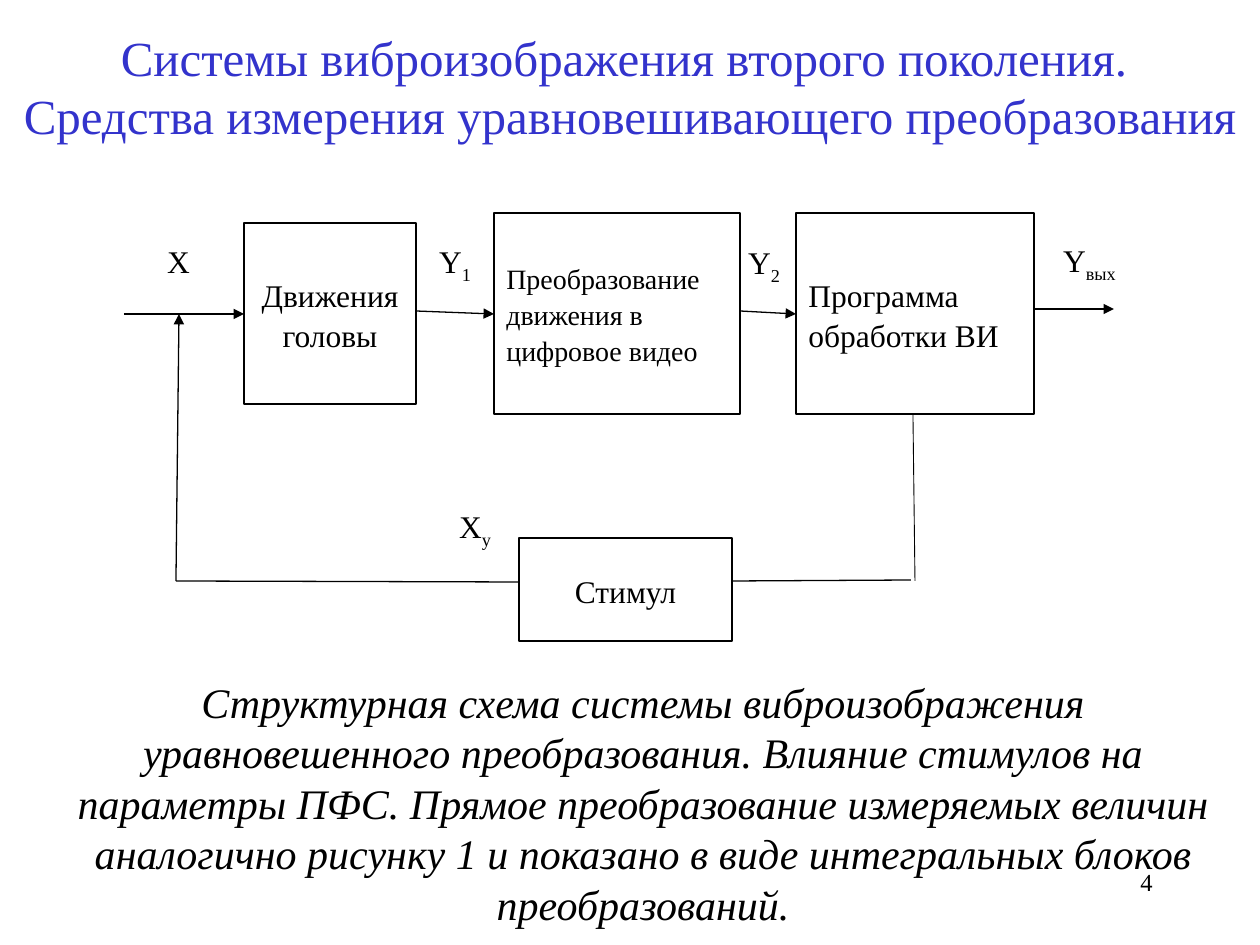
from dataclasses import dataclass

from lxml.etree import SubElement
from pptx import Presentation
from pptx.dml.color import RGBColor
from pptx.enum.shapes import MSO_CONNECTOR as Connector, MSO_SHAPE as Preset
from pptx.enum.text import MSO_ANCHOR as Anchor, MSO_AUTO_SIZE as AutoSize, PP_ALIGN as Align
from pptx.oxml.ns import qn
from pptx.util import Emu, Pt

PX_PER_INCH = 126


@dataclass(frozen=True)
class Theme:
    font: str = "Times New Roman"
    title_color: RGBColor = RGBColor(0x33, 0x33, 0xCC)
    ink: RGBColor = RGBColor(0, 0, 0)
    paper: RGBColor = RGBColor(0xFF, 0xFF, 0xFF)
    title_size: int = 28
    caption_size: int = 24
    block_size: int = 18
    small_block_size: int = 16
    number_size: int = 14
    line_width: float = 0.75
    thin_line_width: float = 0.5


THEME = Theme()
DIAGRAM_SPACING = {"line_spacing": 1.07, "space_after": 8}


def px(length):
    return Emu(round(length * 914400 / PX_PER_INCH))


def write_text(shape, text, size, color=THEME.ink, align=Align.CENTER, anchor=Anchor.TOP,
               italic=None, subscript="", line_spacing=None, space_after=None):
    """Fill a shape with one formatted paragraph and an optional subscript."""
    frame = shape.text_frame
    frame.word_wrap = True
    frame.auto_size = AutoSize.NONE
    frame.vertical_anchor = anchor
    frame.text = text
    paragraph = frame.paragraphs[0]
    paragraph.alignment = align
    if line_spacing is not None:
        paragraph.line_spacing = line_spacing
    if space_after is not None:
        paragraph.space_after = Pt(space_after)
    if subscript:
        run = paragraph.add_run()
        run.text = subscript
        run.font._element.set("baseline", "-25000")
    for run in paragraph.runs:
        run.font.name = THEME.font
        run.font.size = Pt(size)
        run.font.color.rgb = color
        run.font.italic = italic


def add_title(slide, box, text):
    title = slide.shapes.title
    title.left, title.top, title.width, title.height = map(px, box)
    write_text(title, text, THEME.title_size, color=THEME.title_color, anchor=Anchor.MIDDLE)


def add_text(slide, box, text, size, **text_format):
    write_text(slide.shapes.add_textbox(*map(px, box)), text, size, **text_format)


def add_block(slide, box, text, size=THEME.block_size, align=Align.CENTER):
    block = slide.shapes.add_shape(Preset.RECTANGLE, *map(px, box))
    block.shadow.inherit = False
    block.fill.solid()
    block.fill.fore_color.rgb = THEME.paper
    block.line.color.rgb = THEME.ink
    block.line.width = Pt(THEME.line_width)
    write_text(block, text, size, align=align, anchor=Anchor.MIDDLE, **DIAGRAM_SPACING)


def add_line(slide, start, end, arrow=False, width=THEME.line_width):
    line = slide.shapes.add_connector(Connector.STRAIGHT, *map(px, start + end))
    line.line.color.rgb = THEME.ink
    line.line.width = Pt(width)
    if arrow:
        SubElement(line.line._get_or_add_ln(), qn("a:tailEnd"), type="triangle")
    SubElement(line._element.spPr, qn("a:effectLst"))


def main():
    presentation = Presentation()
    presentation.slide_width, presentation.slide_height = px(1260), px(945)
    slide = presentation.slides.add_slide(presentation.slide_layouts[5])

    # Heading and slide number
    add_text(slide, (903, 861, 262, 63), "4", THEME.number_size, align=Align.RIGHT)
    add_title(slide, (0, 21, 1260, 130),
              "Системы виброизображения второго поколения. \v"
              "Средства измерения уравновешивающего преобразования")

    # Processing blocks and the stimulus in the feedback loop
    add_block(slide, (244, 223, 172, 181), "Движения головы")
    add_block(slide, (494, 213, 246, 201), "Преобразование движения в цифровое видео",
              size=THEME.small_block_size, align=Align.LEFT)
    add_block(slide, (796, 213, 238, 201), "Программа обработки ВИ", align=Align.JUSTIFY)
    add_block(slide, (519, 538, 213, 103), "Стимул")

    # Signal names
    signals = [
        ("X", "", (145, 233, 67, 81)),
        ("Y", "1", (416, 233, 78, 81)),
        ("Y", "2", (725, 234, 78, 101)),
        ("X", "y", (431, 498, 88, 117)),
        ("Y", "вых", (1034, 232, 111, 117)),
    ]
    for name, index, box in signals:
        add_text(slide, box, name, THEME.block_size, subscript=index, **DIAGRAM_SPACING)

    # Forward path
    for start, end in [((124, 314), (244, 314)), ((416, 311), (494, 314)),
                       ((740, 311), (796, 314)), ((1034, 309), (1114, 309))]:
        add_line(slide, start, end, arrow=True)

    # Feedback path
    add_line(slide, (913, 414), (915, 581), width=THEME.thin_line_width)
    add_line(slide, (732, 581), (911, 580))
    add_line(slide, (519, 582), (176, 581))
    add_line(slide, (176, 581), (179, 314), arrow=True)

    # Caption
    add_text(slide, (32, 669, 1222, 267),
             "Структурная схема системы виброизображения уравновешенного преобразования. "
             "Влияние стимулов на параметры ПФС. Прямое преобразование измеряемых величин "
             "аналогично рисунку 1 и показано в виде интегральных блоков преобразований.",
             THEME.caption_size, anchor=Anchor.MIDDLE, italic=True)

    presentation.save("out.pptx")


if __name__ == "__main__":
    main()
